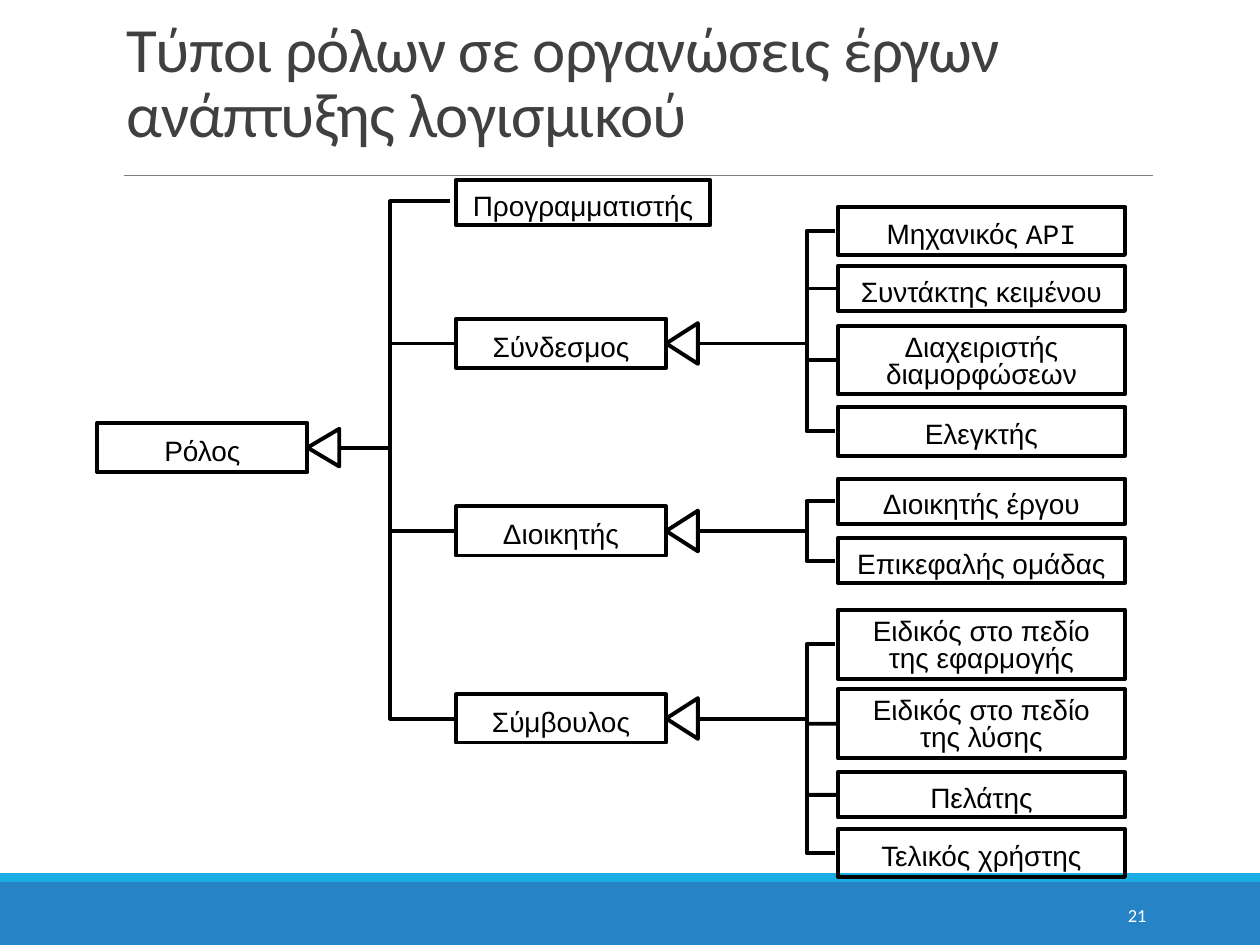
from dataclasses import dataclass

from lxml.etree import SubElement
from pptx import Presentation
from pptx.dml.color import RGBColor as Rgb
from pptx.enum.shapes import MSO_CONNECTOR as Link, MSO_SHAPE as Preset
from pptx.enum.text import MSO_ANCHOR as Anchor, MSO_AUTO_SIZE as Fit, PP_ALIGN as Align
from pptx.oxml.ns import qn
from pptx.util import Cm, Pt


@dataclass(frozen=True)
class Theme:
    ink: Rgb = Rgb(0, 0, 0)
    heading: Rgb = Rgb(0x40, 0x40, 0x40)
    rule: Rgb = Rgb(0x80, 0x80, 0x80)
    footer: Rgb = Rgb(0x26, 0x83, 0xC6)
    strip: Rgb = Rgb(0x1C, 0xAD, 0xE4)
    page: Rgb = Rgb(0xFF, 0xFF, 0xFF)
    heading_font: str = "Calibri"
    role_font: str = "Arial"
    code_font: str = "Courier New"
    heading_size: float = 36
    role_size: float = 16
    page_size: float = 10.5
    stroke: float = 2.25
    hairline: float = 0.5


@dataclass(frozen=True)
class Role:
    """A role box; lengths in centimetres."""
    label: str
    top: float
    height: float
    left: float = 16.89
    width: float = 5.79
    code: str = ""
    two_lines: bool = False

    @property
    def middle(self) -> float:
        return self.top + self.height / 2

    @property
    def right(self) -> float:
        return self.left + self.width


THEME = Theme()
TRUNK_X = 7.87
BRACKET_X, BRACKET_END = 16.26, 16.84
STUB_X = 16.23
HEAD_LENGTH = 0.64
BRANCH = {"left": 9.19, "width": 4.24}

ROOT = Role("Ρόλος", 8.53, 0.99, 1.96, 4.24)
PROGRAMMER = Role("Προγραμματιστής", 3.63, 0.91, 9.19, 5.13)
BRANCHES = [
    (Role("Σύνδεσμος", 6.43, 0.99, **BRANCH), [
        Role("Μηχανικός ", 4.17, 0.97, code="API"),
        Role("Συντάκτης κειμένου", 5.36, 0.91),
        Role("Διαχειριστής διαμορφώσεων", 6.58, 1.37, two_lines=True),
        Role("Ελεγκτής", 8.2, 0.99),
    ]),
    (Role("Διοικητής", 10.21, 0.99, **BRANCH), [
        Role("Διοικητής έργου", 9.65, 0.91),
        Role("Επικεφαλής ομάδας", 10.85, 0.91),
    ]),
    (Role("Σύμβουλος", 14.0, 0.97, **BRANCH), [
        Role("Ειδικός στο πεδίο της εφαρμογής", 12.29, 1.4, two_lines=True),
        Role("Ειδικός στο πεδίο της λύσης", 13.89, 1.4, two_lines=True),
        Role("Πελάτης", 15.57, 0.91),
        Role("Τελικός χρήστης", 16.71, 0.97),
    ]),
]


def apply(target, **formats) -> None:
    for name, value in formats.items():
        setattr(target, name, value)


def add_run(paragraph, text: str, font: str, size: float, color: Rgb):
    run = paragraph.add_run()
    run.text = text
    apply(run.font, name=font, size=Pt(size))
    run.font.color.rgb = color
    return run


def set_line(shape, color: Rgb = THEME.ink, width: float = THEME.stroke) -> None:
    shape.line.color.rgb = color
    shape.line.width = Pt(width)


def draw_band(shapes, top: float, height: float, color: Rgb) -> None:
    band = shapes.add_shape(Preset.RECTANGLE, 0, Cm(top), Cm(25.4), Cm(height))
    band.shadow.inherit = False
    band.fill.solid()
    band.fill.fore_color.rgb = color
    band.line.fill.background()


def draw_role(shapes, role: Role):
    box = shapes.add_shape(Preset.RECTANGLE, Cm(role.left), Cm(role.top),
                           Cm(role.width), Cm(role.height))
    box.shadow.inherit = False
    box.fill.background()
    set_line(box)
    frame = box.text_frame
    apply(frame, word_wrap=role.two_lines, vertical_anchor=Anchor.MIDDLE,
          margin_left=Cm(0.4), margin_right=Cm(0.4),
          margin_top=Cm(0.1), margin_bottom=Cm(0))
    label = frame.paragraphs[0]
    apply(label, alignment=Align.CENTER, line_spacing=0.8 if role.two_lines else 1.0)
    add_run(label, role.label, THEME.role_font, THEME.role_size, THEME.ink)
    if role.code:
        add_run(label, role.code, THEME.code_font, THEME.role_size, THEME.ink)
    return box


def draw_line(shapes, x1: float, x2: float, y: float, joined=None,
              color: Rgb = THEME.ink, width: float = THEME.stroke) -> None:
    """Horizontal line; a joined box takes its start at the left side."""
    line = shapes.add_connector(Link.STRAIGHT, Cm(x1), Cm(y), Cm(x2), Cm(y))
    set_line(line, color, width)
    SubElement(line._element.spPr, qn("a:effectLst"))
    if joined is not None:
        line.begin_connect(joined, 1)


def draw_path(shapes, points: list[tuple[float, float]], close: bool = False) -> None:
    start, *rest = [(Cm(x), Cm(y)) for x, y in points]
    builder = shapes.build_freeform(*start)
    builder.add_line_segments(rest, close=close)
    outline = builder.convert_to_shape()
    outline.shadow.inherit = False
    outline.fill.background()
    set_line(outline)


def draw_inheritance(shapes, parent: Role, half: float, stem_end: float) -> None:
    """Hollow triangle at the parent's right side, with its stem."""
    tip, base, y = parent.right, parent.right + HEAD_LENGTH, parent.middle
    draw_path(shapes, [(base, y + half), (tip, y), (base, y - half)], close=True)
    draw_line(shapes, stem_end, base, y)


def draw_title(slide) -> None:
    title = slide.shapes.title
    apply(title, left=Cm(2.29), top=Cm(0.79), width=Cm(20.96), height=Cm(2.36))
    apply(title.text_frame, vertical_anchor=Anchor.BOTTOM, word_wrap=True,
          auto_size=Fit.NONE)
    heading = title.text_frame.paragraphs[0]
    apply(heading, alignment=Align.LEFT, line_spacing=0.85)
    run = add_run(heading, "Τύποι ρόλων σε οργανώσεις έργων ανάπτυξης λογισμικού",
                  THEME.heading_font, THEME.heading_size, THEME.heading)
    run._r.get_or_add_rPr().set("spc", "-50")


def draw_page_number(shapes) -> None:
    page = shapes.add_textbox(Cm(20.62), Cm(17.93), Cm(2.74), Cm(1.02))
    apply(page.text_frame, word_wrap=True, vertical_anchor=Anchor.MIDDLE)
    number = page.text_frame.paragraphs[0]
    number.alignment = Align.RIGHT
    add_run(number, "21", THEME.heading_font, THEME.page_size, THEME.page)


def main() -> None:
    deck = Presentation()
    apply(deck, slide_width=Cm(25.4), slide_height=Cm(19.05))
    slide = deck.slides.add_slide(deck.slide_layouts[5])
    shapes = slide.shapes

    # Frame of the slide
    draw_band(shapes, 17.78, 1.27, THEME.footer)
    draw_band(shapes, 17.6, 0.18, THEME.strip)
    draw_line(shapes, 2.49, 23.24, 3.53, color=THEME.rule, width=THEME.hairline)
    draw_title(slide)
    draw_page_number(shapes)

    # Root role and trunk
    draw_role(shapes, ROOT)
    draw_role(shapes, PROGRAMMER)
    draw_inheritance(shapes, ROOT, 0.38, TRUNK_X)
    lowest = BRANCHES[-1][0]
    draw_path(shapes, [(lowest.left, lowest.middle), (TRUNK_X, lowest.middle),
                       (TRUNK_X, 4.06), (9.07, 4.06)])

    # Branches with their specialised roles
    for parent, children in BRANCHES:
        parent_box = draw_role(shapes, parent)
        if parent is not lowest:
            draw_line(shapes, parent.left, TRUNK_X, parent.middle, parent_box)
        draw_inheritance(shapes, parent, 0.41, STUB_X)
        first, last = children[0], children[-1]
        draw_path(shapes, [(BRACKET_END, first.middle), (BRACKET_X, first.middle),
                           (BRACKET_X, last.middle), (BRACKET_END, last.middle)])
        for child in children:
            child_box = draw_role(shapes, child)
            if child not in (first, last):
                draw_line(shapes, child.left, STUB_X, child.middle, child_box)

    deck.save("out.pptx")


if __name__ == "__main__":
    main()
